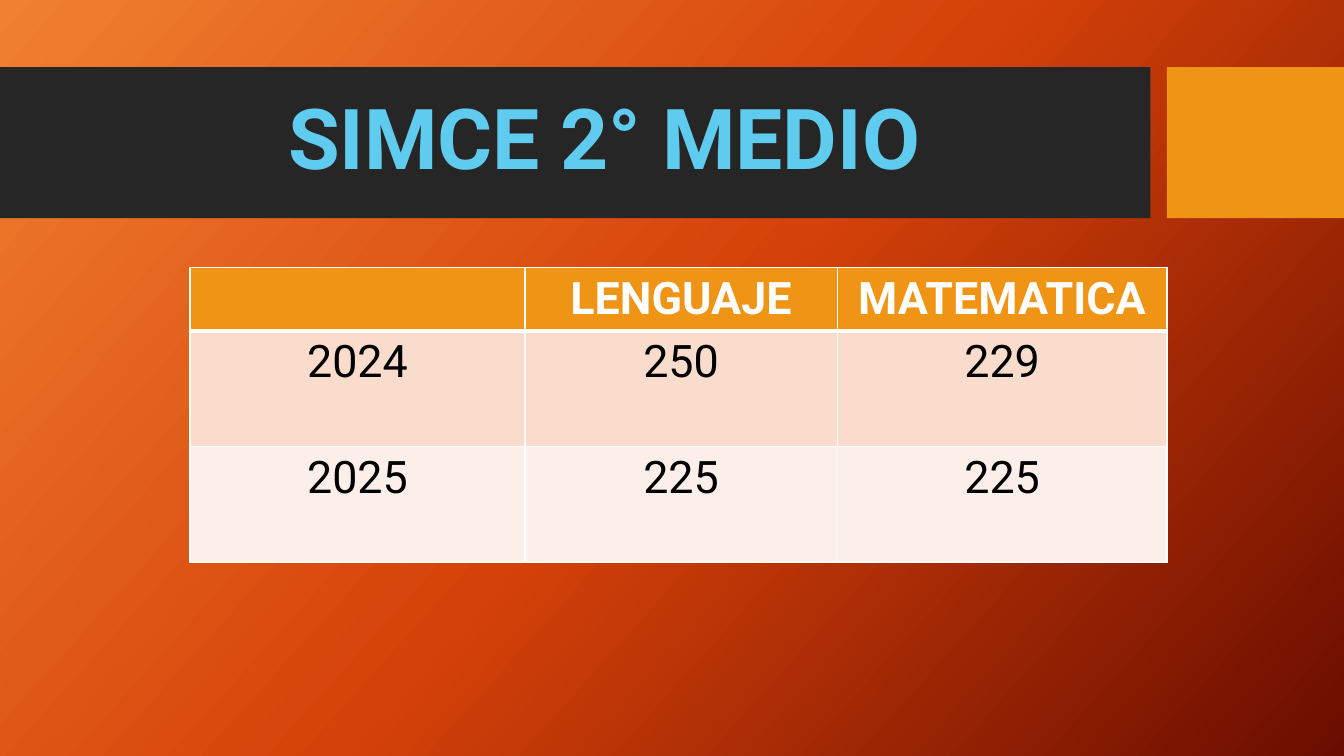
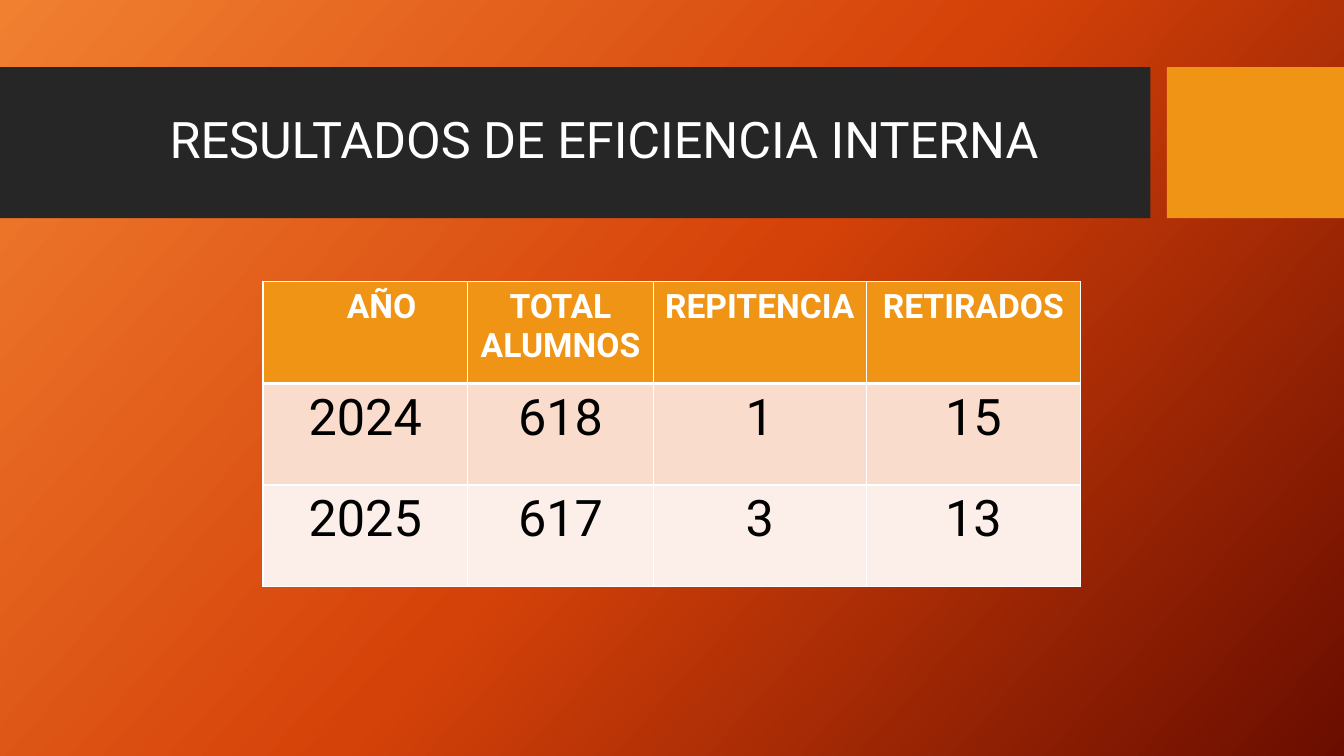
from copy import deepcopy

from lxml import etree
from pptx import Presentation
from pptx import util as u
from pptx.dml.color import RGBColor
from pptx.enum import shapes, text
from pptx.oxml.ns import qn

COLORS = {
    "glow": "F18031", "flame": "D54209", "ember": "6A0D00",
    "band": "262626", "accent": "F09415", "sky": "5FCBEF",
    "white": "FFFFFF", "black": "000000",
    "row_dark": "F9DCCC", "row_light": "FCEEE8",
}
CELL_MARGIN = 0.23
AÑO_INDENT = 0.82


def format_paragraph(paragraph, color, **font_values):
    paragraph.alignment = text.PP_ALIGN.CENTER
    for name, value in {"name": "Roboto", **font_values}.items():
        setattr(paragraph.font, name, value)
    paragraph.font.color.rgb = RGBColor.from_string(COLORS[color])


def set_borders(cell, widths):
    properties = cell._tc.get_or_add_tcPr()
    for position, (side, width) in enumerate(widths.items()):
        line = etree.Element(qn(f"a:ln{side}"), w=str(u.Pt(width)))
        fill = etree.SubElement(line, qn("a:solidFill"))
        etree.SubElement(fill, qn("a:srgbClr"), val=COLORS["white"])
        properties.insert(position, line)


deck = Presentation()
deck.slide_width, deck.slide_height = u.Cm(33.87), u.Cm(19.05)
layout = deck.slide_layouts[5]

background = layout.background.fill
background.gradient()
background.gradient_angle = 318
stop_list = layout.element.find(".//" + qn("a:gsLst"))
stop_list.append(deepcopy(stop_list[-1]))
for stop, (position, color) in zip(
        background.gradient_stops, [(0, "glow"), (0.5, "flame"), (1, "ember")]):
    stop.position = position
    stop.color.rgb = RGBColor.from_string(COLORS[color])

layout_title, *footers = layout.placeholders
for footer in footers:
    layout.shapes.element.remove(footer.element)
title_place = {"left": 1.88, "top": 2.08, "width": 26.7, "height": 3}
for name, value in title_place.items():
    setattr(layout_title, name, u.Cm(value))
layout_title.text_frame.vertical_anchor = text.MSO_ANCHOR.MIDDLE
layout_title.text_frame.auto_size = text.MSO_AUTO_SIZE.NONE

pages = [
    {
        "title": "SIMCE 2° MEDIO",
        "title_font": {"color": "sky", "size": u.Pt(60), "bold": True},
        "at": (4.79, 6.75),
        "columns": [8.44, 7.87, 8.31],
        "rows": [1.59, 2.91, 2.91],
        "sizes": (32, 32),
        "results": [
            ["", "LENGUAJE", "MATEMATICA"],
            ["2024", "250", "229"],
            ["2025", "225", "225"],
        ],
    },
    {
        "title": "RESULTADOS DE EFICIENCIA INTERNA",
        "title_font": {"color": "white", "size": u.Pt(36), "bold": False},
        "at": (6.63, 7.1),
        "columns": [5.15, 4.69, 5.36, 5.4],
        "rows": [2.56] * 3,
        "sizes": (24, 36),
        "results": [
            ["AÑO", "TOTAL ALUMNOS", "REPITENCIA", "RETIRADOS"],
            ["2024", "618", "1", "15"],
            ["2025", "617", "3", "13"],
        ],
    },
]
slides = [deck.slides.add_slide(layout) for page in pages]

for index, (left, width, color) in enumerate(
        [(0, 28.99, "band"), (29.41, 4.46, "accent")]):
    band = slides[0].shapes.add_shape(
        shapes.MSO_SHAPE.RECTANGLE, u.Cm(left), u.Cm(1.69), u.Cm(width), u.Cm(3.81))
    band.shadow.inherit = False
    band.fill.solid()
    band.fill.fore_color.rgb = RGBColor.from_string(COLORS[color])
    band.line.fill.background()
    layout.shapes.element.insert(2 + index, band.element)

for slide, page in zip(slides, pages):
    slide.shapes.title.text = page["title"]
    heading = slide.shapes.title.text_frame.paragraphs[0]
    heading.line_spacing = 0.9
    format_paragraph(heading, **page["title_font"])

    left, top = page["at"]
    results = slide.shapes.add_table(
        len(page["rows"]), len(page["columns"]), u.Cm(left), u.Cm(top),
        u.Cm(sum(page["columns"])), u.Cm(sum(page["rows"]))).table
    for column, width in zip(results.columns, page["columns"]):
        column.width = u.Cm(width)
    for row, height in zip(results.rows, page["rows"]):
        row.height = u.Cm(height)

    for r, values in enumerate(page["results"]):
        is_header = r == 0
        for c, value in enumerate(values):
            cell = results.cell(r, c)
            cell.text = value
            indent = AÑO_INDENT if value == "AÑO" else 0
            cell.margin_left = u.Cm(CELL_MARGIN + indent)
            cell.margin_right = u.Cm(CELL_MARGIN)
            cell.fill.solid()
            cell.fill.fore_color.rgb = RGBColor.from_string(
                COLORS[("accent", "row_dark", "row_light")[r]])
            set_borders(cell, {"L": 1, "R": 1, "T": 3 if r == 1 else 1,
                               "B": 3 if is_header else 1})
            format_paragraph(
                cell.text_frame.paragraphs[0], "white" if is_header else "black",
                size=u.Pt(page["sizes"][0 if is_header else 1]), bold=is_header)

deck.save("out.pptx")
